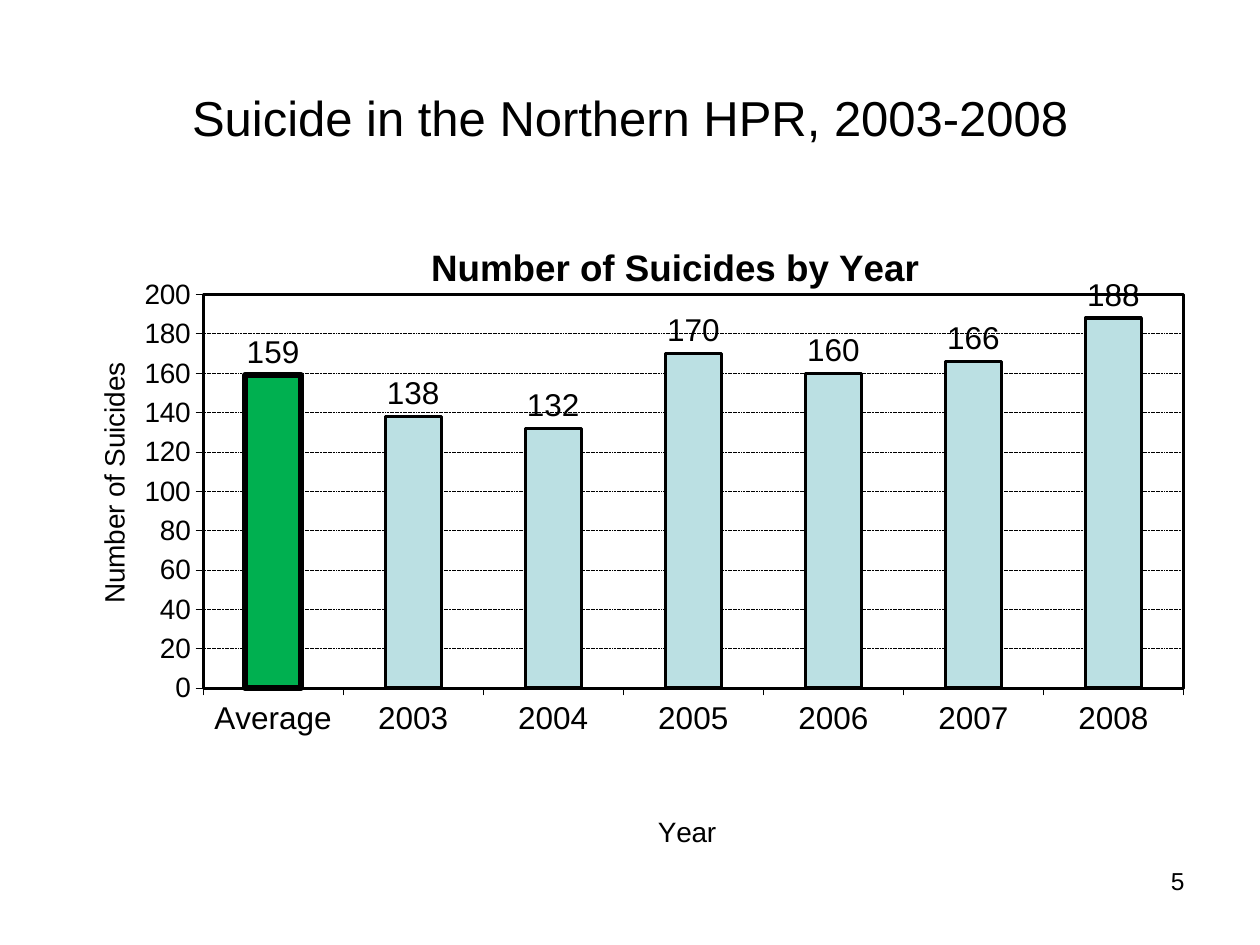
import pptx
import pptx.chart.data
import pptx.dml.color
import pptx.enum.chart
import pptx.enum.dml
import pptx.enum.text
import pptx.oxml
import pptx.oxml.ns
import pptx.util

SLIDE_W, SLIDE_H = 10, 7.5
BLACK, PALE_BLUE, GREEN = "000000", "BBE0E3", "00B050"
FONT = "Arial"
SUICIDES = {"Average": 159, "2003": 138, "2004": 132, "2005": 170,
            "2006": 160, "2007": 166, "2008": 188}
qn = pptx.oxml.ns.qn


def color(hex_code):
    return pptx.dml.color.RGBColor.from_string(hex_code)


def inches(box):
    return [pptx.util.Inches(length) for length in box]


def style_font(font, size, bold=False):
    font.name = FONT
    font.size = pptx.util.Pt(size)
    font.bold = bold
    font.color.rgb = color(BLACK)


def style_line(line, width):
    line.color.rgb = color(BLACK)
    line.width = pptx.util.Pt(width)


def write(frame, text, size, align, bold=False):
    paragraph = frame.paragraphs[0]
    paragraph.alignment = align
    run = paragraph.add_run()
    run.text = text
    style_font(run.font, size, bold)


def set_layout(parent, index, inner=False, **shares):
    """Place a chart part at x, y (and w, h) given as shares of the chart."""
    for old in parent.findall(qn("c:layout")):
        parent.remove(old)
    target = '<c:layoutTarget val="inner"/>' if inner else ""
    modes = "".join(f'<c:{axis}Mode val="edge"/>' for axis in "xy")
    places = "".join(f'<c:{key} val="{share}"/>' for key, share in shares.items())
    parent.insert(index, pptx.oxml.parse_xml(
        f'<c:layout {pptx.oxml.ns.nsdecls("c")}><c:manualLayout>'
        f"{target}{modes}{places}</c:manualLayout></c:layout>"))


def add_chart_heading(heading, text, size, x, y, bold=False):
    write(heading.text_frame, text, size, pptx.enum.text.PP_ALIGN.CENTER, bold)
    set_layout(heading._element, 1, x=x, y=y)


def frame_plot(chart):
    """Set the plot's inner box and outline it in black."""
    plot_area = chart._chartSpace.chart.plotArea
    set_layout(plot_area, 0, inner=True, x=0.126, y=0.126, w=0.859, h=0.565)
    plot_area.append(pptx.oxml.parse_xml(
        f'<c:spPr {pptx.oxml.ns.nsdecls("c", "a")}><a:noFill/><a:ln w="22225">'
        f'<a:solidFill><a:srgbClr val="{BLACK}"/></a:solidFill></a:ln></c:spPr>'))


def style_axes(chart):
    years, counts = chart.category_axis, chart.value_axis
    for axis, size in ((years, 18), (counts, 16)):
        style_font(axis.tick_labels.font, size)
        style_line(axis.format.line, 0.38)
        axis.major_tick_mark = pptx.enum.chart.XL_TICK_MARK.OUTSIDE
        axis.minor_tick_mark = pptx.enum.chart.XL_TICK_MARK.NONE
    counts.minimum_scale, counts.maximum_scale, counts.major_unit = 0, 200, 20
    counts.tick_labels.number_format = "0"
    counts.tick_labels.number_format_is_linked = False
    counts.has_major_gridlines = True
    gridline = counts.major_gridlines.format.line
    style_line(gridline, 0.38)
    gridline.dash_style = pptx.enum.dml.MSO_LINE.SQUARE_DOT
    add_chart_heading(years.axis_title, "Year", 16, 0.52, 0.865)
    add_chart_heading(counts.axis_title, "Number of Suicides", 16, 0.028, 0.217)
    body = counts.axis_title._element.find(".//" + qn("a:bodyPr"))
    body.set("rot", "-5400000")
    body.set("vert", "horz")


def style_bars(plot):
    plot.gap_width = 150
    plot.vary_by_categories = False
    bars = plot.series[0]
    average = bars.points[0]
    for part, fill, width in ((bars, PALE_BLUE, 1.75), (average, GREEN, 3)):
        part.format.fill.solid()
        part.format.fill.fore_color.rgb = color(fill)
        style_line(part.format.line, width)
    labels = bars.data_labels
    labels.show_value = True
    labels.number_format = "0"
    labels.number_format_is_linked = False
    labels.position = pptx.enum.chart.XL_LABEL_POSITION.OUTSIDE_END
    style_font(labels.font, 18)


def add_suicide_chart(slide, box):
    data = pptx.chart.data.CategoryChartData(number_format="0")
    data.categories = list(SUICIDES)
    data.add_series("Series 1", list(SUICIDES.values()))
    chart = slide.shapes.add_chart(
        pptx.enum.chart.XL_CHART_TYPE.COLUMN_CLUSTERED, *inches(box), data).chart
    style_font(chart.font, 24, True)
    chart.has_legend = False
    add_chart_heading(chart.chart_title, "Number of Suicides by Year", 21,
                      0.32, 0.045, True)
    style_axes(chart)
    style_bars(chart.plots[0])
    frame_plot(chart)


def fill_title(slide, box):
    title = slide.shapes.title
    title.left, title.top, title.width, title.height = inches(box)
    title.text_frame.vertical_anchor = pptx.enum.text.MSO_ANCHOR.MIDDLE
    write(title.text_frame, "Suicide in the Northern HPR, 2003-2008", 28,
          pptx.enum.text.PP_ALIGN.CENTER)


def add_page_number(slide, box):
    frame = slide.shapes.add_textbox(*inches(box)).text_frame
    frame.word_wrap = True
    write(frame, "5", 14, pptx.enum.text.PP_ALIGN.RIGHT)


def main():
    deck = pptx.Presentation()
    deck.slide_width, deck.slide_height = inches((SLIDE_W, SLIDE_H))
    slide = deck.slides.add_slide(deck.slide_layouts[5])
    margin = SLIDE_W * 0.05
    content_w = SLIDE_W - 2 * margin
    add_page_number(slide, (7.17, SLIDE_H * 0.91, 2.33, SLIDE_H * 0.07))
    fill_title(slide, (margin, SLIDE_H * 0.04, content_w, SLIDE_H / 6))
    add_suicide_chart(slide, (0.47, 1.64, 9.06, 5.53))
    deck.save("out.pptx")


if __name__ == "__main__":
    main()
